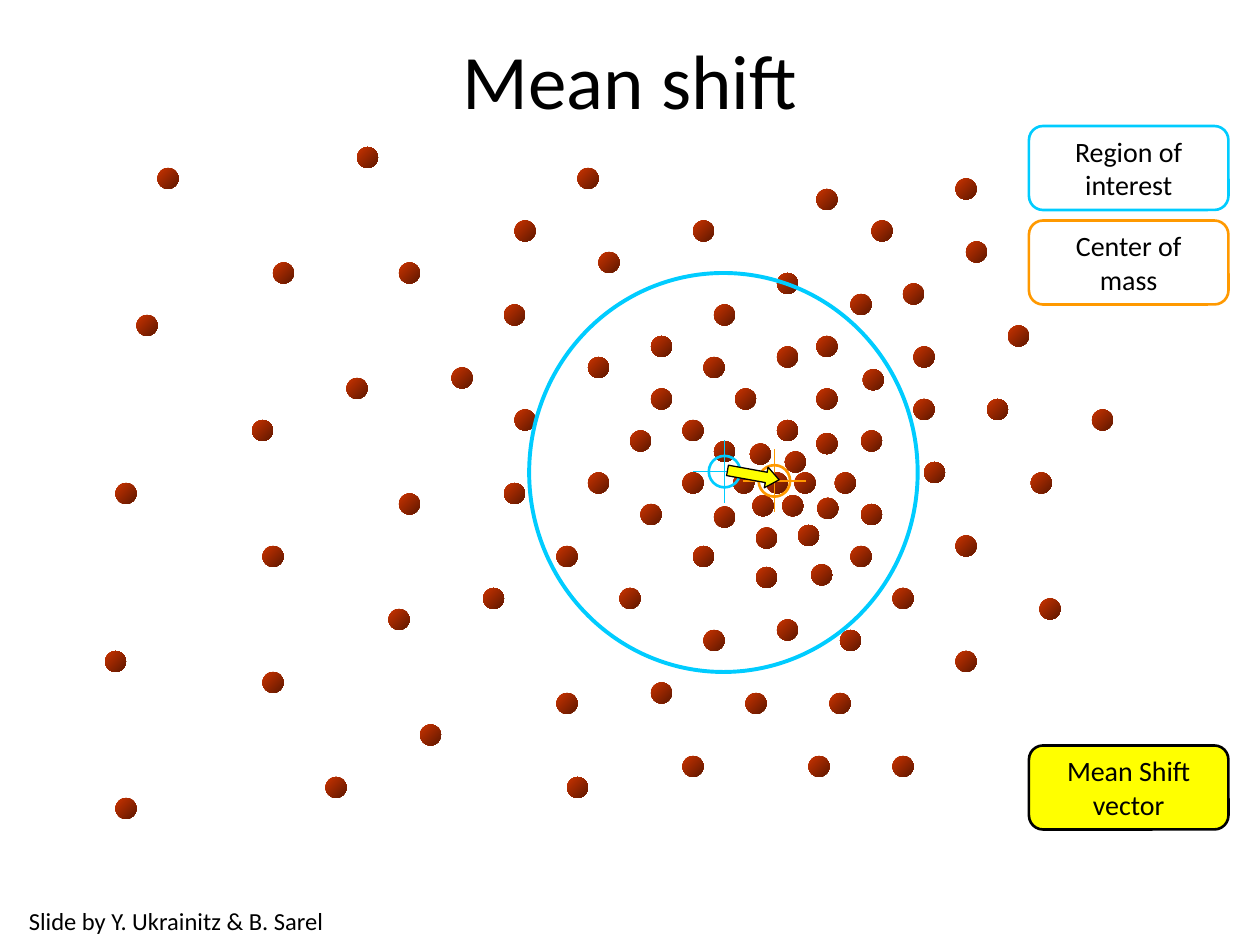
from dataclasses import dataclass

from lxml import etree
from pptx import Presentation
from pptx import util as u
from pptx.dml.color import RGBColor
from pptx.enum import shapes, text
from pptx.oxml.ns import qn


@dataclass(frozen=True)
class Theme:
    font: str = "Calibri"
    title_size: int = 44
    label_size: int = 16
    credit_size: int = 14
    ink: str = "000000"
    region: str = "00CCFF"
    mass: str = "FF9900"
    vector: str = "FFFF00"
    dot_light: str = "CC3300"
    dot_dark: str = "5E1800"


THEME = Theme()
DOT_SIZE = 12
TARGET_SIZE, CROSSHAIR_REACH = 18, 18

# Left and top of every data point
DOTS = [
    # Dense cluster
    (438, 270), (454, 270), (448.5, 258), (428.5, 253.5), (447, 283),
    (430, 283), (467, 284.5), (419, 270), (477, 270), (466.5, 247.5),
    (444, 240), (456, 300), (432, 301.5), (408, 289.5), (390, 270),
    (408, 252), (492, 288), (486, 312), (463.5, 322.5), (432, 324),
    (396, 312), (366, 288), (360, 246), (390, 240), (420, 222),
    (466.5, 222), (444, 198), (372, 222), (402, 204),
    # Right side, from top to bottom
    (444, 156), (408, 174), (466.5, 192), (466.5, 108), (486, 168),
    (493, 211), (492, 246), (522, 228), (522, 198), (516, 162),
    (498, 126), (546, 102), (552, 138), (576, 186), (528, 264),
    (564, 228), (624, 234), (546, 306), (589, 270), (510, 336),
    (594, 342), (546, 372),
    # Lower middle
    (480, 360), (444, 354), (474, 396), (510, 432), (462, 432),
    (426, 396), (402, 360), (354, 336), (372, 390), (390, 432),
    (324, 444), (318, 396), (276, 336), (318, 312),
    # Upper middle
    (336, 270), (294, 234), (336, 204), (372, 192), (342, 144),
    (396, 126), (330, 96), (294, 126), (288, 174), (258, 210),
    # Left side
    (288, 276), (228, 282), (222, 348), (240, 414), (186, 444),
    (150, 384), (150, 312), (198, 216), (228, 150), (156, 150),
    (144, 240), (60, 372), (66, 456), (66, 276), (78, 180),
    (90, 96), (204, 84),
]


def rgb(color):
    return RGBColor.from_string(color)


def add_outlined(parent, kind, box, line, width, fill=None):
    outlined = parent.add_shape(kind, *map(u.Pt, box))
    outlined.shadow.inherit = False
    if fill:
        outlined.fill.solid()
        outlined.fill.fore_color.rgb = rgb(fill)
    else:
        outlined.fill.background()
    outlined.line.color.rgb = rgb(line)
    outlined.line.width = u.Pt(width)
    return outlined


def add_dot(parent, left, top):
    dot = parent.add_shape(shapes.MSO_SHAPE.OVAL,
                           *map(u.Pt, (left, top, DOT_SIZE, DOT_SIZE)))
    dot.shadow.inherit = False
    dot.line.fill.background()
    dot.fill.gradient()
    dot.fill.gradient_angle = 315
    for stop, color in zip(dot.fill.gradient_stops,
                           (THEME.dot_light, THEME.dot_dark)):
        stop.color.rgb = rgb(color)


def add_hairline(parent, start, end, color):
    hairline = parent.add_connector(shapes.MSO_CONNECTOR.STRAIGHT,
                                    *map(u.Pt, (*start, *end)))
    hairline.line.color.rgb = rgb(color)
    hairline.line.width = u.Pt(0.75)
    etree.SubElement(hairline._element.spPr, qn("a:effectLst"))


def add_target(parent, x, y, color):
    """A small ring with a crosshair, centred on x, y."""
    radius, reach = TARGET_SIZE / 2, CROSSHAIR_REACH
    add_outlined(parent, shapes.MSO_SHAPE.OVAL,
                 (x - radius, y - radius, TARGET_SIZE, TARGET_SIZE), color, 1.5)
    add_hairline(parent, (x, y - reach), (x, y + reach), color)
    add_hairline(parent, (x - reach, y), (x + reach, y), color)


def write(frame, lines, size, align, anchor, wrap):
    frame.word_wrap = wrap
    frame.vertical_anchor = anchor
    for index, line in enumerate(lines):
        paragraph = frame.add_paragraph() if index else frame.paragraphs[0]
        paragraph.alignment = align
        run = paragraph.add_run()
        run.text = line
        run.font.name = THEME.font
        run.font.size = u.Pt(size)
        run.font.color.rgb = rgb(THEME.ink)


def add_label(parent, top, lines, line, fill=None):
    label = add_outlined(parent, shapes.MSO_SHAPE.ROUNDED_RECTANGLE,
                         (588, top, 114, 48), line, 1.5, fill)
    write(label.text_frame, lines, THEME.label_size,
          text.PP_ALIGN.CENTER, text.MSO_ANCHOR.MIDDLE, False)


def add_text(parent, box, line, size, align, anchor, wrap):
    words = parent.add_textbox(*map(u.Pt, box))
    write(words.text_frame, [line], size, align, anchor, wrap)


def main():
    deck = Presentation()
    deck.slide_width, deck.slide_height = u.Pt(720), u.Pt(540)
    slide = deck.slides.add_slide(deck.slide_layouts[6])
    canvas = slide.shapes

    # Data points
    for left, top in DOTS:
        add_dot(canvas, left, top)

    # Region of interest with its centre
    region = canvas.add_group_shape().shapes
    add_outlined(region, shapes.MSO_SHAPE.OVAL,
                 (302.4, 156, 222, 228), THEME.region, 2.25)
    add_target(region, 414, 269.5, THEME.region)

    # Legend
    add_label(canvas, 72, ["Region of", "interest"], THEME.region)
    add_label(canvas, 126, ["Center of", "mass"], THEME.mass)
    add_label(canvas, 426, ["Mean Shift", "vector"], THEME.ink, THEME.vector)

    # Centre of mass
    add_target(canvas.add_group_shape().shapes, 442.5, 274.8, THEME.mass)

    # Mean shift vector
    vector = add_outlined(canvas, shapes.MSO_SHAPE.RIGHT_ARROW,
                          (415.5, 265.5, 30, 12), THEME.ink, 0.75, THEME.vector)
    vector.adjustments[0], vector.adjustments[1] = 0.5, 0.625
    vector.rotation = 10.3

    # Credit and title
    add_text(canvas, (9.4, 514, 206.6, 24), "Slide by Y. Ukrainitz & B. Sarel",
             THEME.credit_size, text.PP_ALIGN.LEFT, text.MSO_ANCHOR.TOP, False)
    add_text(canvas, (36, 0, 648, 90), "Mean shift",
             THEME.title_size, text.PP_ALIGN.CENTER, text.MSO_ANCHOR.MIDDLE, True)

    deck.save("out.pptx")


if __name__ == "__main__":
    main()
